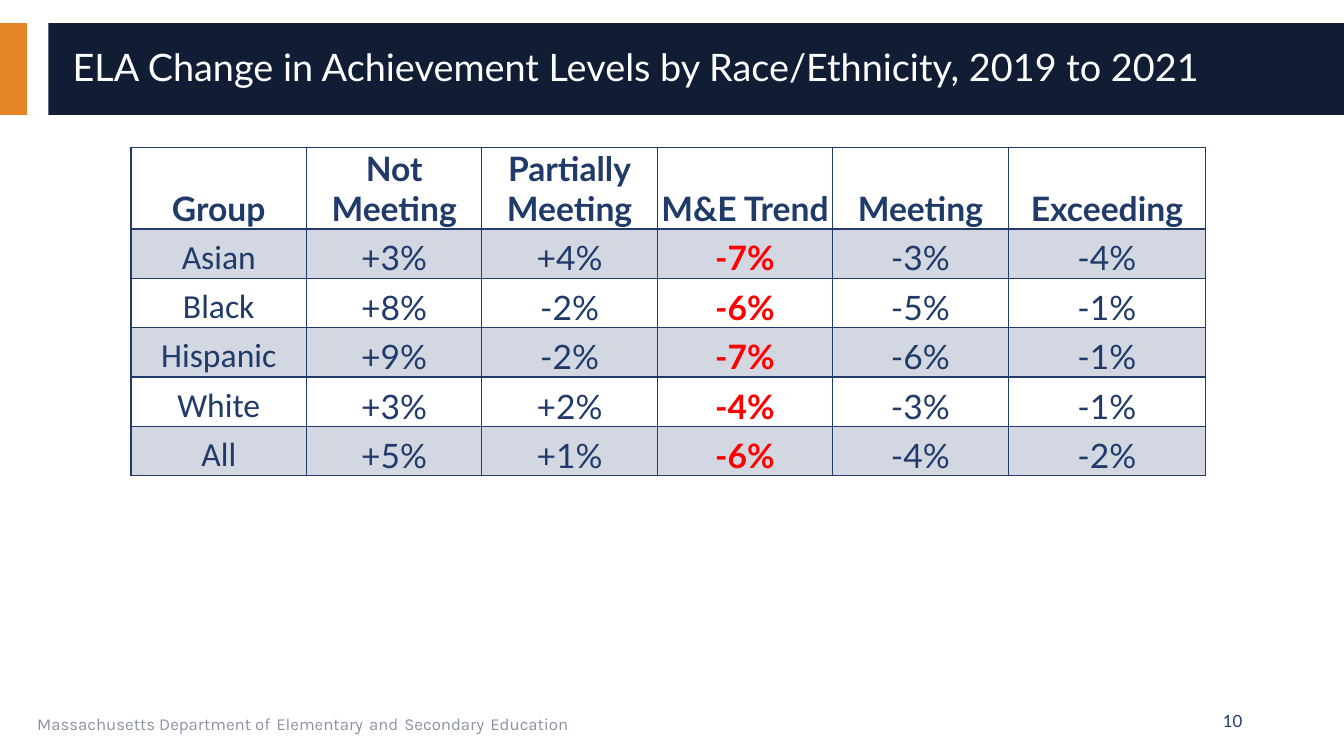
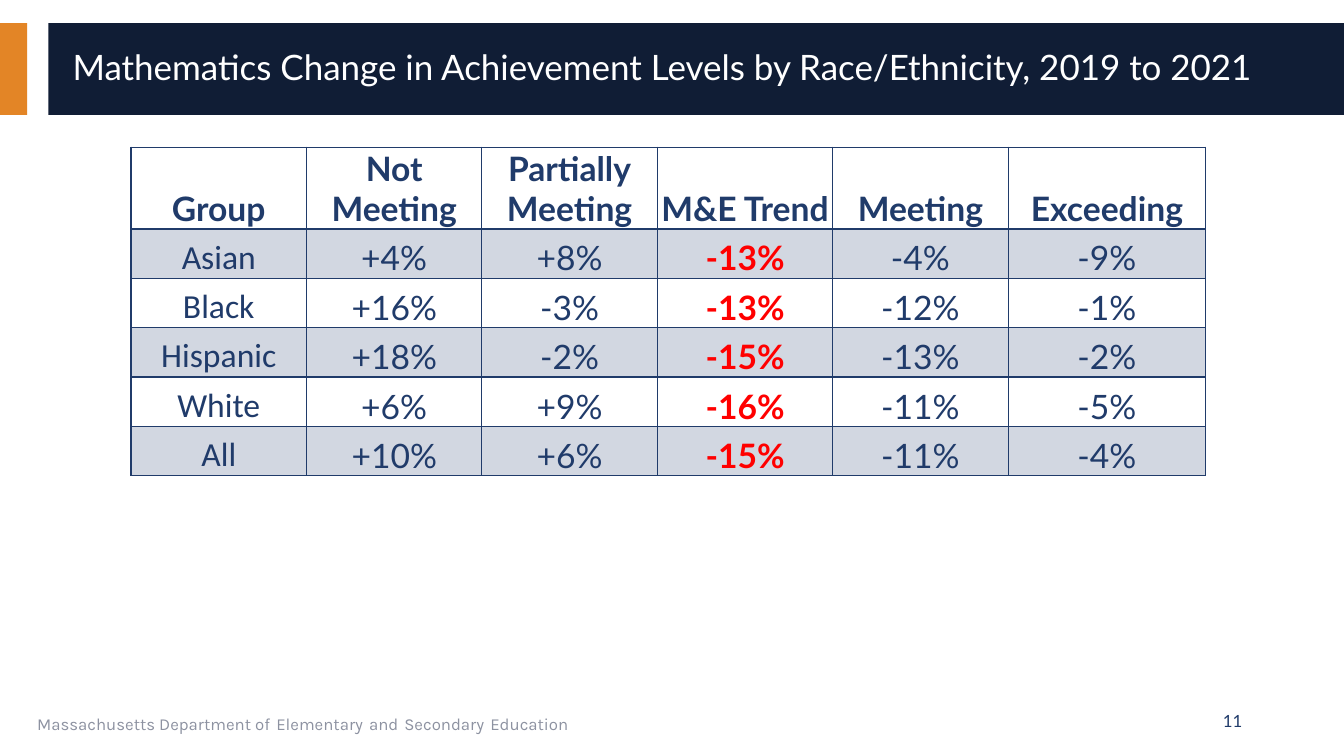
from lxml.etree import SubElement
from pptx import Presentation
from pptx.dml.color import RGBColor
from pptx.enum.shapes import MSO_SHAPE
from pptx.enum.text import MSO_ANCHOR, MSO_AUTO_SIZE, PP_ALIGN
from pptx.oxml.ns import qn
from pptx.util import Inches, Pt

NAVY, BLUE, GOLD = "101D35", "203B6A", "E38526"
GREY, RED, WHITE = "8D92A1", "FF0000", "FFFFFF"
HEADS = ["Group", "Not\nMeeting", "Partially\nMeeting", "M&E Trend", "Meeting", "Exceeding"]
GROUPS = ["Asian", "Black", "Hispanic", "White", "All"]
TREND = HEADS.index("M&E Trend")
WIDTHS = [1.74] * 5 + [1.96]
TALLS = [0.81] + [0.49] * 5
BANDS = [(0, 0.27, GOLD), (0.48, 12.85, NAVY)]
FOOTER = ["Massachusetts Department of", "Elementary", "and", "Secondary", "Education"]
CELL = {
    "vertical_anchor": MSO_ANCHOR.BOTTOM,
    "margin_left": Inches(0.01),
    "margin_right": Inches(0.01),
    "margin_top": Inches(0.01),
    "margin_bottom": 0,
}
FRAME = {"word_wrap": True, "auto_size": MSO_AUTO_SIZE.NONE, "vertical_anchor": MSO_ANCHOR.MIDDLE}
PLACE = {"left": Inches(0.62), "top": Inches(0.32), "width": Inches(12.44), "height": Inches(0.74)}
DECK = [
    ("ELA Change in Achievement Levels by Race/Ethnicity, 2019 to 2021", 27, 10, [
        ["+3%", "+4%", "-7%", "-3%", "-4%"],
        ["+8%", "-2%", "-6%", "-5%", "-1%"],
        ["+9%", "-2%", "-7%", "-6%", "-1%"],
        ["+3%", "+2%", "-4%", "-3%", "-1%"],
        ["+5%", "+1%", "-6%", "-4%", "-2%"],
    ]),
    ("Mathematics Change in Achievement Levels by Race/Ethnicity, 2019 to 2021", 25, 11, [
        ["+4%", "+8%", "-13%", "-4%", "-9%"],
        ["+16%", "-3%", "-13%", "-12%", "-1%"],
        ["+18%", "-2%", "-15%", "-13%", "-2%"],
        ["+6%", "+9%", "-16%", "-11%", "-5%"],
        ["+10%", "+6%", "-15%", "-11%", "-4%"],
    ]),
]


def hue(code):
    return RGBColor.from_string(code)


def write(para, text, size, tint, face="Lato", bold=False):
    run = para.add_run()
    run.text = text
    for name, value in {"size": Pt(size), "name": face, "bold": bold}.items():
        setattr(run.font, name, value)
    run.font.color.rgb = hue(tint)


prs = Presentation()
prs.slide_width, prs.slide_height = Inches(13.33), Inches(7.5)

for heading, size, page, values in DECK:
    slide = prs.slides.add_slide(prs.slide_layouts[5])
    shapes = slide.shapes
    for left, width, tint in BANDS:
        band = shapes.add_shape(MSO_SHAPE.RECTANGLE, Inches(left), Inches(0.23), Inches(width), Inches(0.91))
        band.shadow.inherit = False
        band.fill.solid()
        band.fill.fore_color.rgb = hue(tint)
        band.line.fill.background()

    title = shapes.title
    title.element.getparent().append(title.element)
    for name, value in PLACE.items():
        setattr(title, name, value)
    for name, value in FRAME.items():
        setattr(title.text_frame, name, value)
    para = title.text_frame.paragraphs[0]
    para.alignment, para.line_spacing = PP_ALIGN.LEFT, 0.9
    write(para, heading, size, WHITE)

    grid = shapes.add_table(6, 6, Inches(1.3), Inches(1.46), Inches(sum(WIDTHS)), Inches(sum(TALLS))).table
    grid.first_row = grid.horz_banding = False
    for col, width in zip(grid.columns, WIDTHS):
        col.width = Inches(width)
    for row, tall in zip(grid.rows, TALLS):
        row.height = Inches(tall)

    rows = [HEADS] + [[group, *line] for group, line in zip(GROUPS, values)]
    for r, line in enumerate(rows):
        for c, text in enumerate(line):
            cell = grid.cell(r, c)
            for name, value in CELL.items():
                setattr(cell, name, value)
            props = cell._tc.get_or_add_tcPr()
            for side in ("lnL", "lnR", "lnT", "lnB"):
                thick = (r, side) in ((0, "lnB"), (1, "lnT"))
                edge = SubElement(props, qn(f"a:{side}"), w=str(Pt(2 if thick else 1)))
                SubElement(SubElement(edge, qn("a:solidFill")), qn("a:srgbClr"), val=BLUE)
            if r % 2:
                cell.fill.solid()
                cell.fill.fore_color.rgb = hue(BLUE)
                tone = props.find(f"{qn('a:solidFill')}/{qn('a:srgbClr')}")
                SubElement(tone, qn("a:alpha"), val="20000")
            else:
                cell.fill.background()
            trend = r > 0 and c == TREND
            face = "Calibri" if r > 0 and c == 0 else "Lato"
            frame = cell.text_frame
            for i, part in enumerate(text.split("\n")):
                para = frame.add_paragraph() if i else frame.paragraphs[0]
                para.alignment = PP_ALIGN.CENTER
                write(para, part, 24, RED if trend else BLUE, face, r == 0 or trend)

    foot = shapes.add_textbox(Inches(0.27), Inches(6.95), Inches(8.44), Inches(0.4)).text_frame
    foot.word_wrap = True
    para = foot.paragraphs[0]
    for i, word in enumerate(FOOTER):
        if i:
            write(para, " ", 18, BLUE, "Karla")
        write(para, word, 12, GREY, "Karla")

    number = shapes.add_textbox(Inches(9.42), Inches(6.95), Inches(3), Inches(0.4)).text_frame
    for name, value in FRAME.items():
        setattr(number, name, value)
    para = number.paragraphs[0]
    para.alignment = PP_ALIGN.RIGHT
    write(para, str(page), 12, BLUE)

prs.save("out.pptx")
